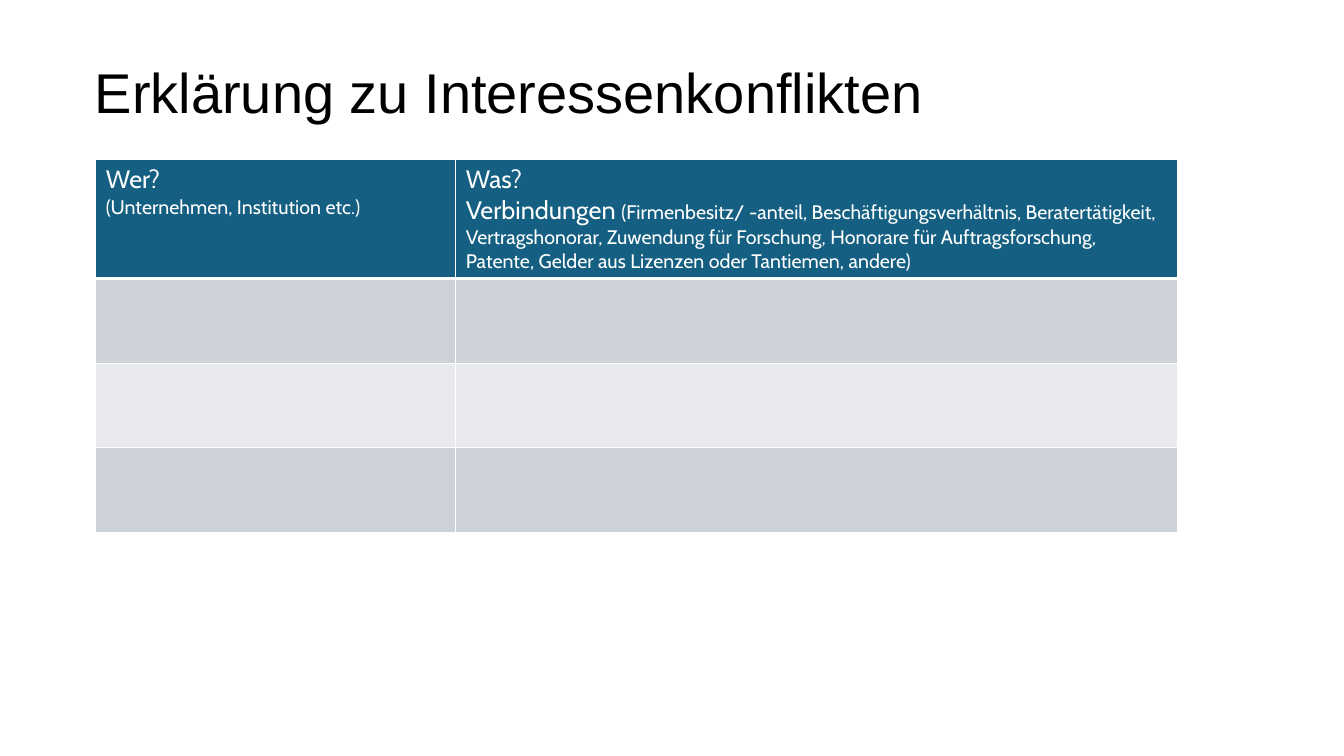
import dataclasses

import pptx
import pptx.dml.color
import pptx.enum.text
import pptx.oxml
import pptx.oxml.ns
import pptx.util
from pptx.util import Inches


@dataclasses.dataclass(frozen=True)
class Theme:
    title_font: str = "Arial"
    table_font: str = "Cabin"
    title_size: int = 40
    heading_size: int = 18
    detail_size: int = 14
    black: str = "000000"
    white: str = "FFFFFF"
    header_fill: str = "156082"
    band_fills: tuple = ("CCD2D8", "E8EAED")


THEME = Theme()
COLUMN_WIDTHS = (3.57, 7.16)
ROW_HEIGHTS = (1.17, 0.84, 0.84, 0.84)

# Each heading is a list of paragraphs, each paragraph a list of (text, size).
# A line feed in a text is a line break within its paragraph.
HEADINGS = (
    [
        [("Wer?", THEME.heading_size)],
        [("(Unternehmen, Institution etc.)", THEME.detail_size)],
    ],
    [
        [
            ("Was?\nVerbindungen ", THEME.heading_size),
            (
                "(Firmenbesitz/ -anteil, Beschäftigungsverhältnis, Beratertätigkeit, "
                "Vertragshonorar, Zuwendung für Forschung, Honorare für Auftragsforschung, "
                "Patente, Gelder aus Lizenzen oder Tantiemen, andere)",
                THEME.detail_size,
            ),
        ],
    ],
)


def rgb(value):
    return pptx.dml.color.RGBColor.from_string(value)


def format_font(font, name, size, color):
    values = {"name": name, "size": pptx.util.Pt(size), "bold": False}
    for attribute, value in values.items():
        setattr(font, attribute, value)
    font.color.rgb = rgb(color)


def place_title(page, text):
    title = page.shapes.title
    box = {
        "left": Inches(0.84),
        "top": Inches(0.14),
        "width": Inches(10.73),
        "height": Inches(1.61),
    }
    for attribute, value in box.items():
        setattr(title, attribute, value)
    title.text_frame.vertical_anchor = pptx.enum.text.MSO_ANCHOR.MIDDLE
    para = title.text_frame.paragraphs[0]
    para.alignment = pptx.enum.text.PP_ALIGN.LEFT
    para.line_spacing = 0.9
    span = para.add_run()
    span.text = text
    format_font(span.font, THEME.title_font, THEME.title_size, THEME.black)


def write_heading(cell, paragraphs):
    for index, pieces in enumerate(paragraphs):
        frame = cell.text_frame
        para = frame.add_paragraph() if index else frame.paragraphs[0]
        for text, size in pieces:
            for line_index, line in enumerate(text.split("\n")):
                if line_index:
                    para.add_line_break()
                span = para.add_run()
                span.text = line
                format_font(span.font, THEME.table_font, size, THEME.white)


def style_cell(cell, fill, bottom_width, top_width):
    """Draw white borders, in points, and fill the cell."""
    properties = cell._tc.get_or_add_tcPr()
    widths = {"lnL": 1, "lnR": 1, "lnT": top_width, "lnB": bottom_width}
    for side, width in widths.items():
        border = pptx.oxml.parse_xml(
            f'<a:{side} {pptx.oxml.ns.nsdecls("a")} w="{pptx.util.Pt(width)}">'
            f'<a:solidFill><a:srgbClr val="{THEME.white}"/></a:solidFill></a:{side}>'
        )
        properties.append(border)
    cell.fill.solid()
    cell.fill.fore_color.rgb = rgb(fill)


def add_disclosure_table(page):
    table = page.shapes.add_table(
        len(ROW_HEIGHTS),
        len(COLUMN_WIDTHS),
        Inches(0.95),
        Inches(1.58),
        Inches(sum(COLUMN_WIDTHS)),
        Inches(sum(ROW_HEIGHTS)),
    ).table
    for column, width in zip(table.columns, COLUMN_WIDTHS):
        column.width = Inches(width)
    for index, (row, height) in enumerate(zip(table.rows, ROW_HEIGHTS)):
        row.height = Inches(height)
        fill = THEME.band_fills[(index - 1) % 2] if index else THEME.header_fill
        for cell in row.cells:
            style_cell(
                cell,
                fill,
                bottom_width=1 if index else 3,
                top_width=3 if index == 1 else 1,
            )
    for cell, paragraphs in zip(table.rows[0].cells, HEADINGS):
        write_heading(cell, paragraphs)


def main():
    deck = pptx.Presentation()
    deck.slide_width = Inches(13.33)
    deck.slide_height = Inches(7.5)
    page = deck.slides.add_slide(deck.slide_layouts.get_by_name("Title Only"))
    place_title(page, "Erklärung zu Interessenkonflikten")
    add_disclosure_table(page)
    deck.save("out.pptx")


if __name__ == "__main__":
    main()
